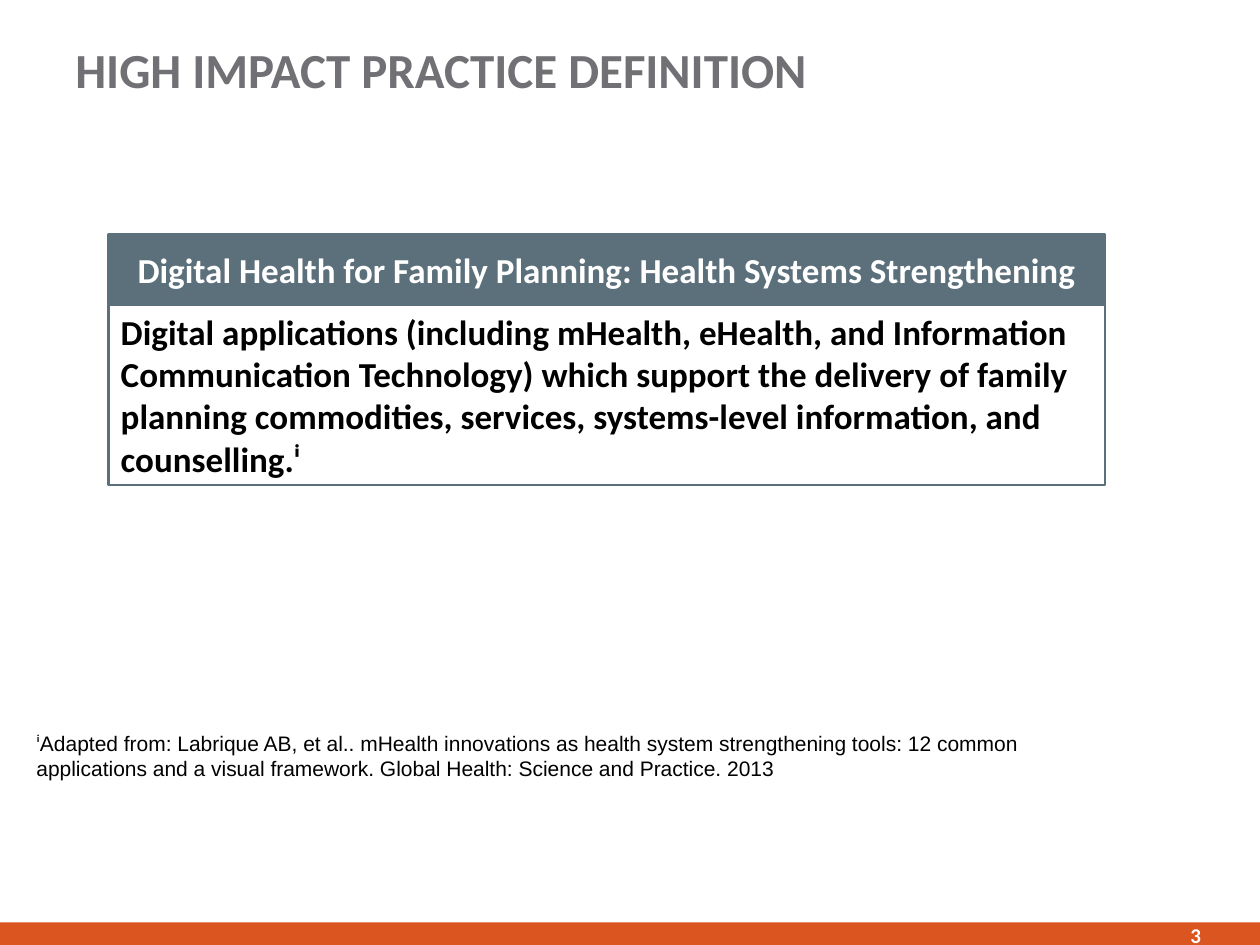
from pptx import Presentation
from pptx import util as u
from pptx.dml.color import RGBColor
from pptx.enum import shapes, text

ORANGE = RGBColor(0xDB, 0x55, 0x20)
SLATE = RGBColor(0x5C, 0x70, 0x7C)
GREY = RGBColor(0x71, 0x70, 0x74)
WHITE = RGBColor(0xFF, 0xFF, 0xFF)
BLACK = RGBColor(0, 0, 0)

LEFT, ALIGN_CENTER, RIGHT = text.PP_ALIGN.LEFT, text.PP_ALIGN.CENTER, text.PP_ALIGN.RIGHT
TOP, MIDDLE = text.MSO_ANCHOR.TOP, text.MSO_ANCHOR.MIDDLE


class SlideBuilder:
    font = "Calibri"
    columns, rows = 100, 75
    line_width = u.Pt(1.5)

    def __init__(self, presentation):
        self.slide = presentation.slides.add_slide(presentation.slide_layouts[6])
        self.column = presentation.slide_width / self.columns
        self.row = presentation.slide_height / self.rows

    def area(self, left, top, width, height):
        return (round(left * self.column), round(top * self.row),
                round(width * self.column), round(height * self.row))

    def set_text(self, shape, runs, size, color, bold=True, align=LEFT, anchor=TOP, inset=0.05):
        frame = shape.text_frame
        frame.word_wrap = True
        frame.vertical_anchor = anchor
        frame.margin_top = frame.margin_bottom = u.Inches(inset)
        paragraph = frame.paragraphs[0]
        paragraph.alignment = align
        for words, font in runs:
            run = paragraph.add_run()
            run.text = words
            run.font.name = font
            run.font.size = u.Pt(size)
            run.font.bold = bold
            run.font.color.rgb = color

    def label(self, area, runs, size, color, **style):
        box = self.slide.shapes.add_textbox(*self.area(*area))
        self.set_text(box, runs, size, color, **style)

    def rectangle(self, area, fill=None, line=None):
        shape = self.slide.shapes.add_shape(shapes.MSO_SHAPE.RECTANGLE, *self.area(*area))
        shape.shadow.inherit = False
        if fill is None:
            shape.fill.background()
        else:
            shape.fill.solid()
            shape.fill.fore_color.rgb = fill
        if line is None:
            shape.line.fill.background()
        else:
            shape.line.color.rgb = line
            shape.line.width = self.line_width
        return shape

    def card(self, left, top, width, header_height, body_height, header, body):
        head = self.rectangle((left, top, width, header_height), SLATE, SLATE)
        self.set_text(head, [(header, self.font)], 20, WHITE, align=ALIGN_CENTER, anchor=MIDDLE)
        panel = self.rectangle((left, top + header_height, width, body_height), line=SLATE)
        self.set_text(panel, [(body, self.font)], 20, BLACK, anchor=MIDDLE)


def main():
    presentation = Presentation()
    presentation.slide_width = u.Inches(10)
    presentation.slide_height = u.Inches(7.5)
    builder = SlideBuilder(presentation)
    calibri = builder.font

    builder.rectangle((0, 73.2, 100, 1.8), ORANGE)
    builder.label((5, 0, 90, 10.9), [("HIGH IMPACT PRACTICE DEFINITION", calibri)],
                  28, GREY, anchor=MIDDLE)
    builder.label((90.9, 73.2, 5.4, 1.8), [("3", calibri)], 12, WHITE, align=RIGHT, inset=0)
    builder.label(
        (1.9, 57.5, 85.9, 5),
        [("ⁱ", calibri),
         ("Adapted from: Labrique AB, et al.. mHealth innovations as health system "
          "strengthening tools: 12 common applications and a visual framework. "
          "Global Health: Science and Practice. 2013", "Arial")],
        12, BLACK, bold=False)
    builder.card(
        8.6, 18.6, 79.1, 5.6, 14.3,
        "Digital Health for Family Planning: Health Systems Strengthening",
        "Digital applications (including mHealth, eHealth, and Information Communication "
        "Technology) which support the delivery of family planning commodities, services, "
        "systems-level information, and counselling.ⁱ")

    presentation.save("out.pptx")


if __name__ == "__main__":
    main()
